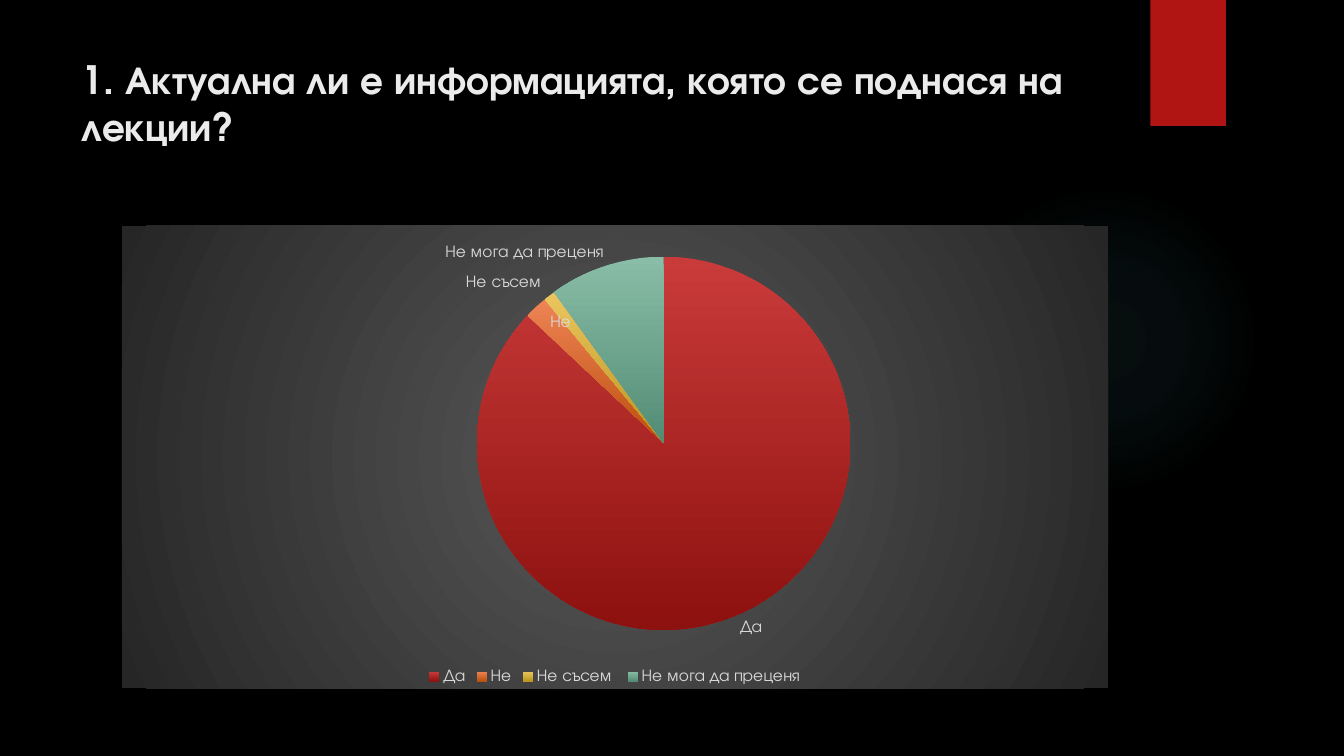
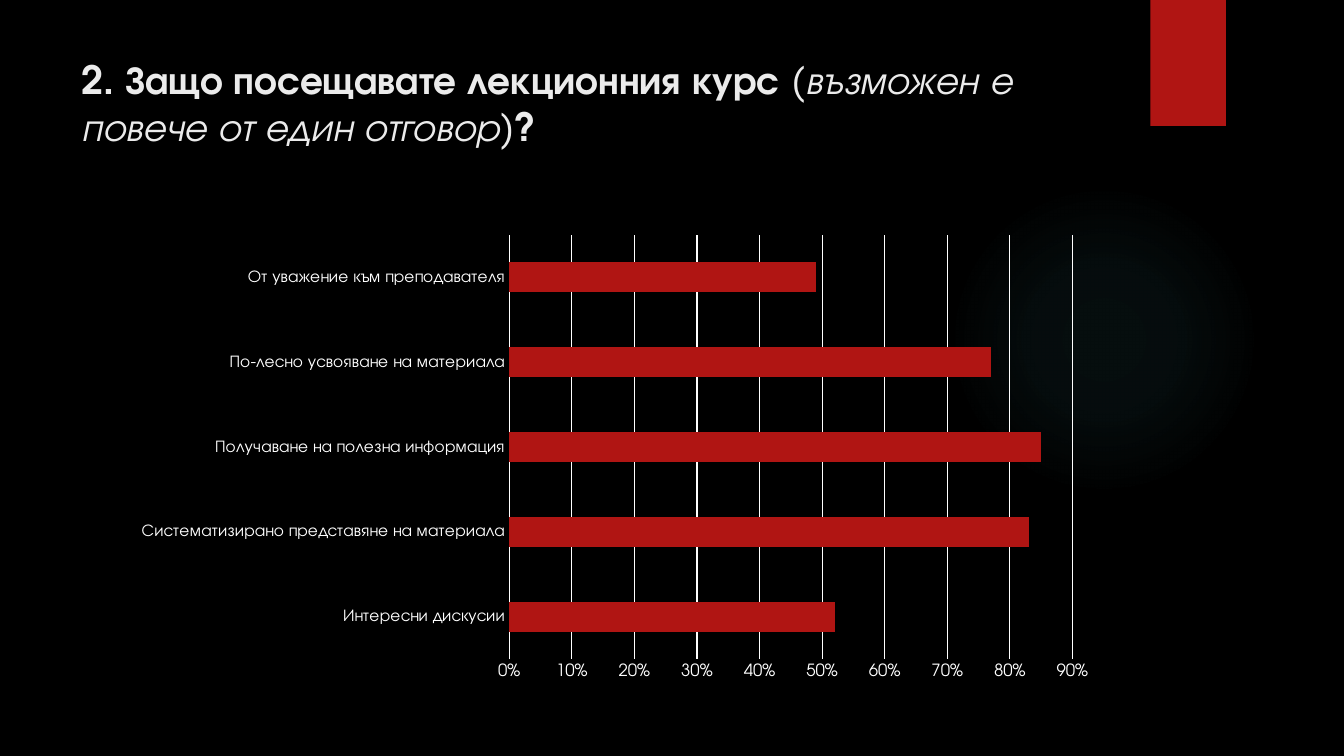
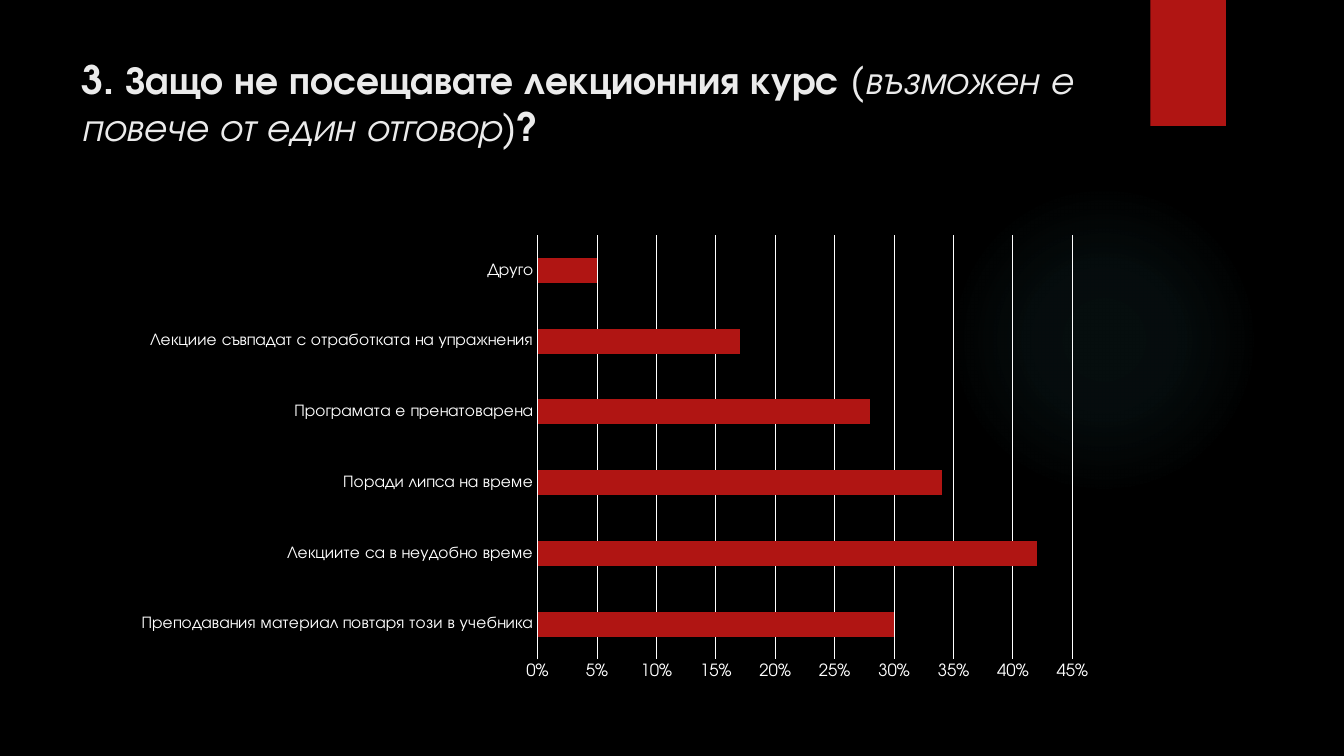
"""Build three survey result slides with a pie chart and two bar charts."""
from lxml import etree
from pptx import Presentation
from pptx.chart.data import CategoryChartData
from pptx.dml.color import RGBColor
from pptx.enum.chart import XL_CHART_TYPE, XL_LABEL_POSITION, XL_LEGEND_POSITION, XL_TICK_MARK
from pptx.enum.shapes import MSO_SHAPE
from pptx.enum.text import MSO_ANCHOR
from pptx.oxml import parse_xml
from pptx.oxml.ns import nsdecls, qn
from pptx.util import Inches, Pt

PIE, BAR = XL_CHART_TYPE.PIE, XL_CHART_TYPE.BAR_CLUSTERED
OUTSIDE_END = XL_LABEL_POSITION.OUTSIDE_END
LEGEND_BOTTOM = XL_LEGEND_POSITION.BOTTOM
TICK_NONE = XL_TICK_MARK.NONE
OVAL, RECTANGLE = MSO_SHAPE.OVAL, MSO_SHAPE.RECTANGLE
ANCHOR_TOP = MSO_ANCHOR.TOP

FONT = "TeX Gyre Adventor"
COLORS = {
    "background": "000000",
    "glow": "50B9C1",
    "accent": "B01513",
    "title": "EBEBEB",
    "chart_text": "FFFFFF",
    "pie_text": "D9D9D9",
    "panel_center": "595959",
    "panel_edge": "262626",
}
SLICE_GRADIENTS = [
    ("C93B3A", "8D110F"),
    ("EE8455", "BC4F0E"),
    ("EBC65F", "BB941F"),
    ("89BDA7", "538C74"),
]
GLOW_STOPS = [(0, COLORS["glow"], 7), (36, COLORS["glow"], 6), (69, COLORS["glow"], 0)]
PANEL_STOPS = [(0, COLORS["panel_center"], 100), (100, COLORS["panel_edge"], 100)]
BOLD = {"bold": True, "italic": False}
ITALIC = {"bold": False, "italic": True}
HINT = ("(възможен е повече от един отговор)", ITALIC)


def rgb(name):
    """Return the named colour."""
    return RGBColor.from_string(COLORS[name])


def format_font(font, size, color, **values):
    """Apply the shared typeface and the given values to a font."""
    for attribute, value in {"name": FONT, "size": Pt(size), **values}.items():
        setattr(font, attribute, value)
    font.color.rgb = rgb(color)


def radial_fill(stops):
    """Return a circular gradient fill made of (position, colour, opacity) stops."""
    stop_xml = "".join(
        f'<a:gs pos="{position * 1000}"><a:srgbClr val="{color}">'
        f'<a:alpha val="{opacity * 1000}"/></a:srgbClr></a:gs>'
        for position, color, opacity in stops
    )
    return parse_xml(
        f'<a:gradFill {nsdecls("a")} rotWithShape="1"><a:gsLst>{stop_xml}</a:gsLst>'
        '<a:path path="circle"><a:fillToRect l="50000" t="50000" r="50000" b="50000"/>'
        "</a:path></a:gradFill>"
    )


def add_plain_shape(slide, kind, left, top, width, height):
    """Add a preset shape without line or shadow."""
    shape = slide.shapes.add_shape(kind, Inches(left), Inches(top), Inches(width), Inches(height))
    shape.shadow.inherit = False
    shape.line.fill.background()
    return shape


def add_title(slide, runs, size):
    """Add the slide title from (text, format) runs."""
    box = slide.shapes.add_textbox(Inches(0.71), Inches(0.5), Inches(10.29), Inches(1.53))
    frame = box.text_frame
    frame.word_wrap = True
    frame.vertical_anchor = ANCHOR_TOP
    for text, values in runs:
        run = frame.paragraphs[0].add_run()
        run.text = text
        format_font(run.font, size, "title", **values)


def add_question_slide(presentation, runs, size):
    """Add a slide with the shared background, glow, band and a title."""
    slide = presentation.slides.add_slide(presentation.slide_layouts[6])
    slide.background.fill.solid()
    slide.background.fill.fore_color.rgb = rgb("background")
    glow = add_plain_shape(slide, OVAL, 9.41, 1.83, 3.08, 3.08)
    glow.fill.background()
    properties = glow.element.spPr
    properties.replace(properties.find(qn("a:noFill")), radial_fill(GLOW_STOPS))
    band = add_plain_shape(slide, RECTANGLE, 11.41, 0, 0.75, 1.25)
    band.fill.solid()
    band.fill.fore_color.rgb = rgb("accent")
    add_title(slide, runs, size)
    return slide


def add_answer_chart(slide, kind, answers, number_format):
    """Add a chart of an {answer: value} dict."""
    data = CategoryChartData(number_format=number_format)
    data.categories = list(answers)
    data.add_series("Series 1", list(answers.values()))
    frame = slide.shapes.add_chart(
        kind, Inches(1.21), Inches(2.24), Inches(9.78), Inches(4.59), data
    )
    chart = frame.chart
    chart.has_title = False
    chart.has_legend = kind == PIE
    format_font(chart.font, 10, "chart_text")
    return chart


def fill_panel(chart):
    """Give the chart area its radial gradient."""
    properties = etree.Element(qn("c:spPr"))
    properties.append(radial_fill(PANEL_STOPS))
    line = etree.SubElement(properties, qn("a:ln"))
    etree.SubElement(line, qn("a:noFill"))
    chart._chartSpace.find(qn("c:chart")).addnext(properties)


def move_label(series, index, right, down):
    """Shift one category label by fractions of the chart size."""
    label = series.points[index].data_label
    label.position = OUTSIDE_END
    format_font(label.font, 12, "pie_text")
    element = next(
        item for item in series.data_labels._element.findall(qn("c:dLbl"))
        if item.find(qn("c:idx")).get("val") == str(index)
    )
    for tag, shown in {"c:showVal": "0", "c:showCatName": "1"}.items():
        element.find(qn(tag)).set("val", shown)
    layout = parse_xml(
        f'<c:layout {nsdecls("c")}><c:manualLayout><c:x val="{right}"/>'
        f'<c:y val="{down}"/></c:manualLayout></c:layout>'
    )
    element.find(qn("c:idx")).addnext(layout)


def add_pie(slide, answers):
    """Add a pie chart with gradient slices and category labels."""
    chart = add_answer_chart(slide, PIE, answers, "General")
    fill_panel(chart)
    chart.legend.position = LEGEND_BOTTOM
    chart.legend.include_in_layout = False
    format_font(chart.legend.font, 12, "pie_text")
    chart.plots[0].vary_by_categories = True
    series = chart.plots[0].series[0]
    for index, colors in enumerate(SLICE_GRADIENTS):
        style = series.points[index].format
        style.line.fill.background()
        style.fill.gradient()
        style.fill.gradient_angle = 270
        for stop, color in zip(style.fill.gradient_stops, colors):
            stop.color.rgb = RGBColor.from_string(color)
    labels = series.data_labels
    values = {
        "show_category_name": True,
        "show_value": False,
        "show_percentage": False,
        "number_format": "0%",
        "number_format_is_linked": False,
        "position": OUTSIDE_END,
    }
    for attribute, value in values.items():
        setattr(labels, attribute, value)
    format_font(labels.font, 12, "pie_text")
    move_label(series, 1, 0.04, 0.06)


def add_bars(slide, answers, maximum, step):
    """Add a horizontal bar chart with a percent axis."""
    chart = add_answer_chart(slide, BAR, answers, "0%")
    plot = chart.plots[0]
    plot.gap_width = 182
    plot.vary_by_categories = False
    series = plot.series[0]
    series.invert_if_negative = False
    series.format.fill.solid()
    series.format.fill.fore_color.rgb = rgb("accent")
    for axis in (chart.category_axis, chart.value_axis):
        axis.major_tick_mark = TICK_NONE
        axis.minor_tick_mark = TICK_NONE
        format_font(axis.tick_labels.font, 12, "chart_text")
    chart.category_axis.has_major_gridlines = False
    scale = chart.value_axis
    values = {
        "minimum_scale": 0,
        "maximum_scale": maximum,
        "major_unit": step,
        "has_major_gridlines": True,
    }
    for attribute, value in values.items():
        setattr(scale, attribute, value)
    scale.tick_labels.number_format = "0%"
    scale.tick_labels.number_format_is_linked = False
    scale.format.line.fill.background()
    for line in (chart.category_axis.format.line, scale.major_gridlines.format.line):
        line.color.rgb = rgb("chart_text")
        line.width = Pt(0.75)


def main():
    """Build and save the presentation."""
    presentation = Presentation()
    presentation.slide_width = Inches(13.33)
    presentation.slide_height = Inches(7.5)

    title = [("1. Актуална ли е информацията, която се поднася на лекции?", BOLD)]
    slide = add_question_slide(presentation, title, 27.9)
    add_pie(slide, {"Да": 87, "Не": 2, "Не съсем ": 1, "Не мога да преценя": 10})

    title = [("2. Защо посещавате лекционния курс ", BOLD), HINT, ("?", BOLD)]
    slide = add_question_slide(presentation, title, 27.9)
    reasons_to_attend = {
        "Интересни дискусии": 0.52,
        "Систематизирано представяне на материала": 0.83,
        "Получаване на полезна информация": 0.85,
        "По-лесно усвояване на материала": 0.77,
        "От уважение към преподавателя": 0.49,
    }
    add_bars(slide, reasons_to_attend, 0.9, 0.1)

    title = [("3. Защо не посещавате лекционния курс ", BOLD), HINT, ("?", BOLD)]
    slide = add_question_slide(presentation, title, 28)
    reasons_to_skip = {
        "Преподавания материал повтаря този в учебника": 0.3,
        "Лекциите са в неудобно време": 0.42,
        "Поради липса на време": 0.34,
        "Програмата е пренатоварена": 0.28,
        "Лекциие съвпадат с отработката на упражнения": 0.17,
        "Друго": 0.05,
    }
    add_bars(slide, reasons_to_skip, 0.45, 0.05)

    presentation.save("out.pptx")


if __name__ == "__main__":
    main()
